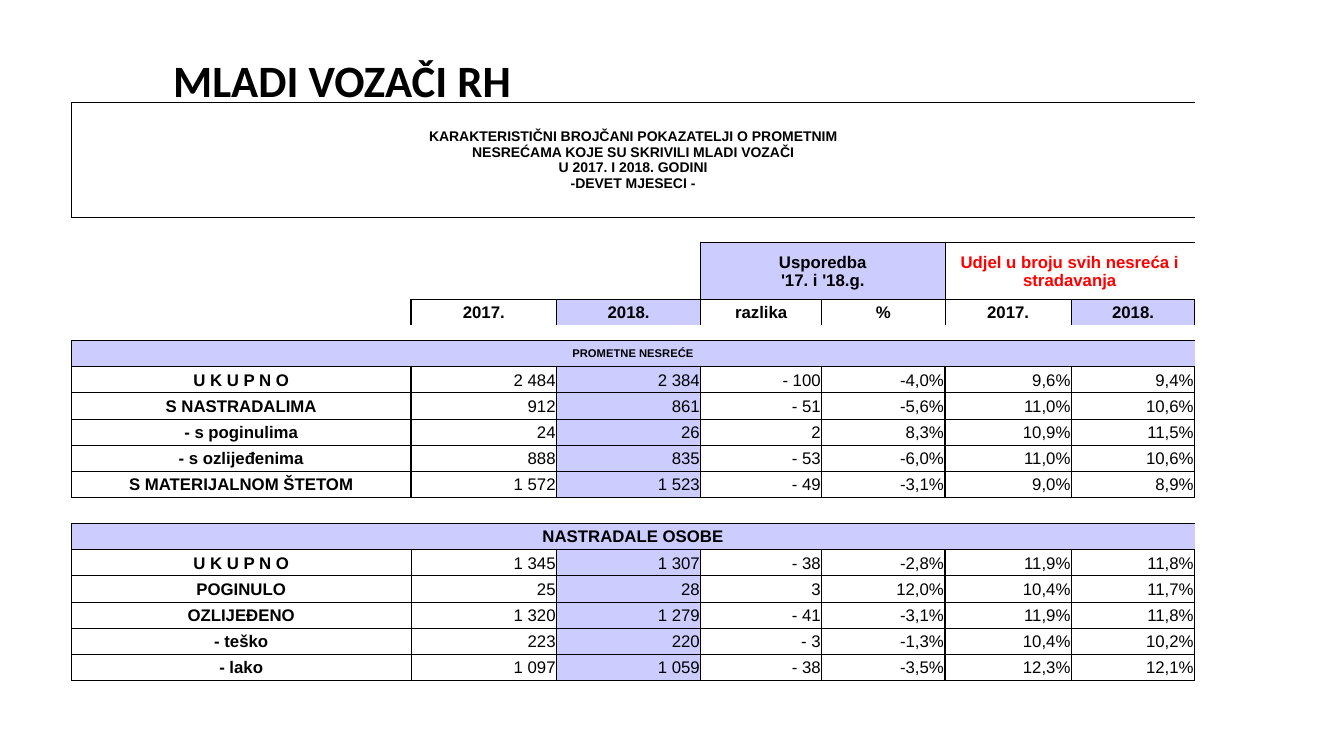
from dataclasses import dataclass

from lxml.etree import SubElement
from pptx import Presentation
from pptx.dml.color import RGBColor as Color
from pptx.enum.text import MSO_ANCHOR as Anchor, PP_ALIGN as Align
from pptx.oxml.ns import qn
from pptx.util import Pt


@dataclass(frozen=True)
class Theme:
    black: str = "000000"
    red: str = "FF0000"
    lavender: str = "CCCCFF"
    title_font: str = "Calibri"
    table_font: str = "Arial"
    title_size: int = 32
    heading_size: int = 10
    section_size: int = 8
    body_size: int = 12
    gap_size: int = 4


theme = Theme()


def set_font(para, name, size, bold, color):
    para.font.name = name
    para.font.size = Pt(size)
    para.font.bold = bold
    para.font.color.rgb = Color.from_string(color)


def set_borders(cell, widths):
    properties = cell._tc.get_or_add_tcPr()
    for index, (side, width) in enumerate(zip(("lnL", "lnR", "lnT", "lnB"), widths)):
        line = SubElement(properties, qn(f"a:{side}"), w=str(Pt(width)))
        if width:
            paint = SubElement(line, qn("a:solidFill"))
            SubElement(paint, qn("a:srgbClr"), val=theme.black)
        else:
            SubElement(line, qn("a:noFill"))
        properties.insert(index, line)


HEADING, COMPARISON, YEARS, ACCIDENTS, CASUALTIES = 0, 2, 3, 5, 12
GAPS = (1, 4, 11)
SECTIONS = (ACCIDENTS, CASUALTIES)

rows = [
    ["KARAKTERISTIČNI BROJČANI POKAZATELJI O PROMETNIM\v"
     "NESREĆAMA KOJE SU SKRIVILI MLADI VOZAČI\v"
     "U 2017. I 2018. GODINI\v-DEVET MJESECI -"],
    [],
    ["", "", "", "Usporedba\v'17. i '18.g.", "",
     "Udjel u broju svih nesreća i stradavanja"],
    ["", "2017.", "2018.", "razlika", "%", "2017.", "2018."],
    [],
    ["PROMETNE NESREĆE"],
    ["U K U P N O", "2 484", "2 384", "- 100", "-4,0%", "9,6%", "9,4%"],
    ["S NASTRADALIMA", "912", "861", "- 51", "-5,6%", "11,0%", "10,6%"],
    ["- s poginulima", "24", "26", "2", "8,3%", "10,9%", "11,5%"],
    ["- s ozlijeđenima", "888", "835", "- 53", "-6,0%", "11,0%", "10,6%"],
    ["S MATERIJALNOM ŠTETOM", "1 572", "1 523", "- 49", "-3,1%", "9,0%", "8,9%"],
    [],
    ["NASTRADALE OSOBE"],
    ["U K U P N O", "1 345", "1 307", "- 38", "-2,8%", "11,9%", "11,8%"],
    ["POGINULO", "25", "28", "3", "12,0%", "10,4%", "11,7%"],
    ["OZLIJEĐENO", "1 320", "1 279", "- 41", "-3,1%", "11,9%", "11,8%"],
    ["- teško", "223", "220", "- 3", "-1,3%", "10,4%", "10,2%"],
    ["- lako", "1 097", "1 059", "- 38", "-3,5%", "12,3%", "12,1%"],
]
column_widths = [242.6, 104, 103, 86.4, 88, 90.4, 88]
row_heights = [82, 18, 41, 18, 11] + [18.7] * 13

outline = [1, 0, 0, 0, 0, 0, 0, 1]
vertical_lines = (
    [outline, [0] * 8, [0, 0, 0, 1, 0, 0.5, 0, 1], [0, 1, 1, 1, 0.5, 0.5, 0.5, 1]]
    + [[0] * 8, outline] + [[1, 1, 1, 1, 1, 2, 0.5, 1]] * 5
    + [[0] * 8, outline] + [[1, 0.5, 0.5, 1, 1, 2, 0.5, 1]] * 5
)
full, thin = [1] * 7, [0.5] * 7
horizontal_lines = (
    [full, full, [0] * 3 + [1] * 4, [0] + [1] * 6, [0] * 7]
    + [full] * 2 + [thin] * 4 + [full] * 3 + [thin] * 4 + [full]
)

deck = Presentation()
deck.slide_width, deck.slide_height = Pt(960), Pt(540)
page = deck.slides.add_slide(deck.slide_layouts[6])

box = page.shapes.add_textbox(Pt(116.6), Pt(33.8), Pt(377.3), Pt(46))
box.text_frame.word_wrap = True
para = box.text_frame.paragraphs[0]
para.text = "MLADI VOZAČI RH"
set_font(para, theme.title_font, theme.title_size, True, theme.black)

frame = page.shapes.add_table(
    len(rows), len(column_widths), Pt(51), Pt(73.2),
    Pt(sum(column_widths)), Pt(sum(row_heights)))
table = frame.table
table.first_row = table.horz_banding = False
for column, width in zip(table.columns, column_widths):
    column.width = Pt(width)
for row, height in zip(table.rows, row_heights):
    row.height = Pt(height)

for r, texts in enumerate(rows):
    is_data = r > ACCIDENTS and r not in GAPS + SECTIONS
    for c in range(len(column_widths)):
        cell = table.cell(r, c)
        cell.vertical_anchor = Anchor.MIDDLE
        cell.margin_left = cell.margin_right = cell.margin_top = Pt(0.7)
        cell.margin_bottom = Pt(0)

        shaded = (r in SECTIONS or (r, c) == (YEARS, 6)
                  or (r == COMPARISON and c in (3, 4))
                  or (c == 2 and (r == YEARS or is_data)))
        if shaded:
            cell.fill.solid()
            cell.fill.fore_color.rgb = Color.from_string(theme.lavender)
        else:
            cell.fill.background()

        text = texts[c] if c < len(texts) else ""
        if not text:
            size = theme.gap_size
        elif r == HEADING:
            size = theme.heading_size
        elif r == ACCIDENTS:
            size = theme.section_size
        else:
            size = theme.body_size
        is_value = is_data and c > 0
        color = theme.red if (r, c) == (COMPARISON, 5) else theme.black
        para = cell.text_frame.paragraphs[0]
        para.text = text
        para.alignment = Align.RIGHT if is_value else Align.CENTER
        set_font(para, theme.table_font, size, not is_value, color)
        set_borders(cell, (*vertical_lines[r][c:c + 2],
                           horizontal_lines[r][c], horizontal_lines[r + 1][c]))

for r in (HEADING, *GAPS, *SECTIONS):
    table.cell(r, 0).merge(table.cell(r, 6))
for first, last in ((0, 2), (3, 4), (5, 6)):
    table.cell(COMPARISON, first).merge(table.cell(COMPARISON, last))

deck.save("out.pptx")
